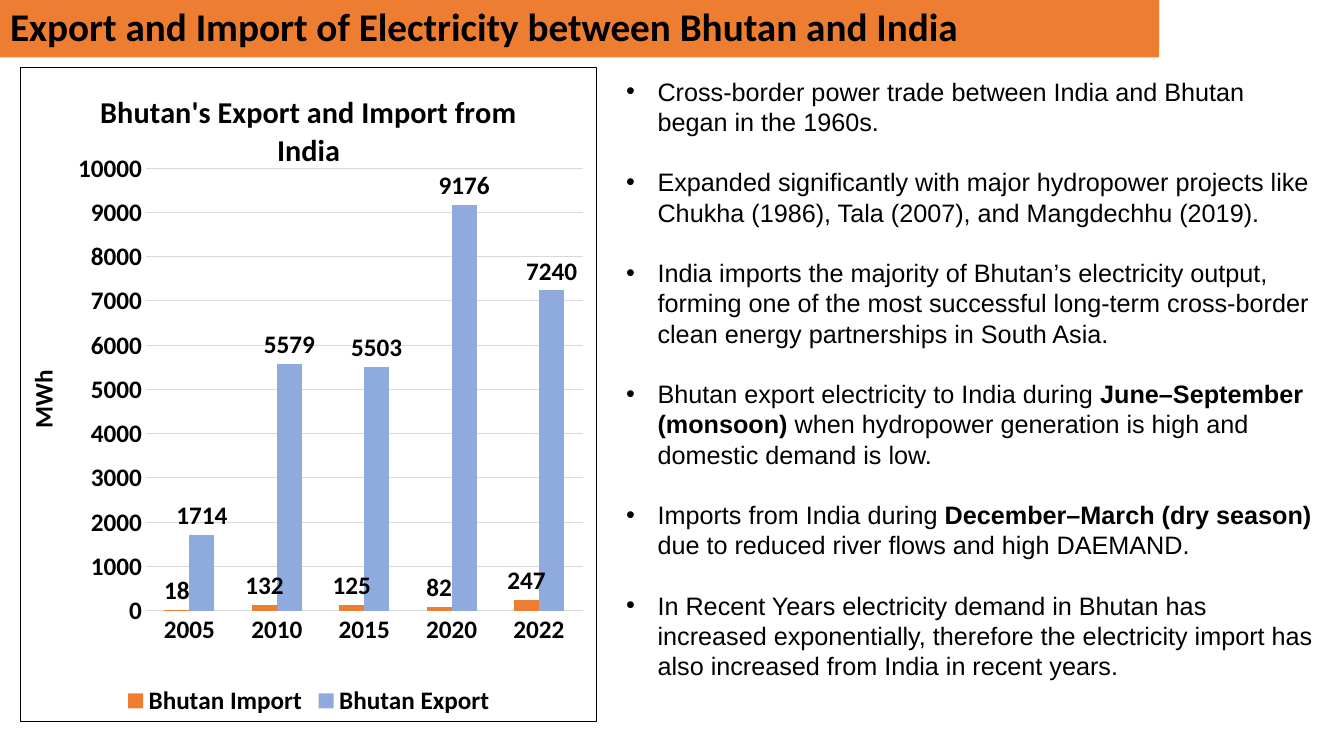
from lxml.etree import SubElement
from pptx import Presentation
from pptx.chart.data import CategoryChartData
from pptx.dml.color import RGBColor
from pptx.enum.chart import XL_CHART_TYPE, XL_LABEL_POSITION, XL_LEGEND_POSITION, XL_TICK_MARK
from pptx.enum.text import MSO_ANCHOR, MSO_AUTO_SIZE, PP_ALIGN
from pptx.oxml import parse_xml
from pptx.oxml.ns import nsdecls, qn
from pptx.util import Pt

BLACK, ORANGE, BLUE, GREY = "000000", "ED7D31", "8FAADC", "D9D9D9"
YEARS = ["2005", "2010", "2015", "2020", "2022"]
TRADE = [
    ("Bhutan Import", ORANGE, [18, 132, 125, 82, 247]),
    ("Bhutan Export", BLUE, [1714, 5579, 5503, 9176, 7240]),
]
# Each point alternates plain and bold pieces, starting with plain.
POINTS = [
    ["Cross-border power trade between India and Bhutan began in the 1960s."],
    ["Expanded significantly with major hydropower projects like Chukha (1986), "
     "Tala (2007), and Mangdechhu (2019)."],
    ["India imports the majority of Bhutan’s electricity output, forming one of the most "
     "successful long-term cross-border clean energy partnerships in South Asia."],
    ["Bhutan export electricity to India during ", "June–September (monsoon)",
     " when hydropower generation is high and domestic demand is low."],
    ["Imports from India during ", "December–March (dry season)",
     " due to reduced river flows and high DAEMAND."],
    ["In Recent Years electricity demand in Bhutan has increased exponentially, therefore "
     "the electricity import has also increased from India in recent years."],
]


def color(value):
    return RGBColor.from_string(value)


def paint(fill, value):
    fill.solid()
    fill.fore_color.rgb = color(value)


class Page:
    def __init__(self, slide):
        self.slide = slide
        self.head, self.text = "Calibri", "Arial"
        self.size, self.step, self.indent = 18, 21.6, 22.5

    def style(self, font, name, size, bold):
        font.name, font.size, font.bold = name, Pt(size), bold
        font.color.rgb = color(BLACK)

    def place(self, shape, left, top, width, height):
        shape.left, shape.top = Pt(left), Pt(top)
        shape.width, shape.height = Pt(width), Pt(height)
        frame = shape.text_frame
        frame.word_wrap = True
        frame.auto_size = MSO_AUTO_SIZE.NONE
        frame.vertical_anchor = MSO_ANCHOR.MIDDLE
        return frame

    def title(self, text, *box):
        shape = self.slide.shapes.title
        frame = self.place(shape, *box)
        paint(shape.fill, ORANGE)
        frame.text = text
        para = frame.paragraphs[0]
        para.alignment, para.line_spacing = PP_ALIGN.LEFT, 0.9
        self.style(para.font, self.head, 28, True)

    def points(self, items, *box):
        frame = self.place(self.slide.placeholders[1], *box)
        for i, parts in enumerate(items):
            para = frame.add_paragraph() if i else frame.paragraphs[0]
            props = para._p.get_or_add_pPr()
            props.set("marL", str(Pt(self.indent)))
            props.set("indent", str(-Pt(self.indent)))
            SubElement(props, qn("a:buFont"), typeface=self.text)
            SubElement(props, qn("a:buChar"), char="•")
            para.alignment = PP_ALIGN.LEFT
            para.line_spacing = Pt(self.step)
            para.space_before = Pt(self.step if i else 0)
            self.style(para.font, self.text, self.size, False)
            for j, part in enumerate(parts):
                run = para.add_run()
                run.text = part
                if j % 2:
                    run.font.bold = True

    def label(self, owner, text, size):
        """Give a chart or an axis its title."""
        frame = owner.text_frame
        frame.text = text
        self.style(frame.paragraphs[0].font, self.head, size, True)

    def columns(self, title, unit, cats, rows, *box):
        data = CategoryChartData()
        data.categories = cats
        for name, _, vals in rows:
            data.add_series(name, vals)
        chart = self.slide.shapes.add_chart(
            XL_CHART_TYPE.COLUMN_CLUSTERED, *map(Pt, box), data).chart
        self.style(chart.font, self.head, self.size, True)
        self.label(chart.chart_title, title, 21.6)
        chart.chart_title.include_in_layout = False
        chart.has_legend = True
        chart.legend.position = XL_LEGEND_POSITION.BOTTOM
        chart.legend.include_in_layout = False
        self.axes(chart, unit)
        plot = chart.plots[0]
        plot.gap_width, plot.overlap, plot.vary_by_categories = 150, 0, False
        for series, (_, fill, _) in zip(plot.series, rows):
            paint(series.format.fill, fill)
            labels = series.data_labels
            labels.show_value = True
            labels.position = XL_LABEL_POSITION.OUTSIDE_END
            self.style(labels.font, self.head, self.size, True)
        self.frame(chart, x=0.217, y=0.155, w=0.759, h=0.676)

    def axes(self, chart, unit):
        cat, val = chart.category_axis, chart.value_axis
        for axis in (cat, val):
            axis.major_tick_mark = axis.minor_tick_mark = XL_TICK_MARK.NONE
            self.style(axis.tick_labels.font, self.head, self.size, True)
        val.minimum_scale, val.maximum_scale, val.major_unit = 0, 10000, 1000
        for line in (cat.format.line, val.major_gridlines.format.line):
            paint(line.fill, GREY)
            line.width = Pt(0.75)
        val.format.line.fill.background()
        self.label(val.axis_title, unit, self.size)

    def frame(self, chart, **area):
        """Fix the plot area and draw the outer border."""
        root = chart._chartSpace.find(qn("c:chart"))
        plot = root.find(qn("c:plotArea"))
        for old in plot.findall(qn("c:layout")):
            plot.remove(old)
        spots = "".join(f'<c:{key} val="{val}"/>' for key, val in area.items())
        plot.insert(0, parse_xml(
            f'<c:layout {nsdecls("c")}><c:manualLayout><c:layoutTarget val="inner"/>'
            f'<c:xMode val="edge"/><c:yMode val="edge"/>{spots}</c:manualLayout></c:layout>'))
        root.addnext(parse_xml(
            f'<c:spPr {nsdecls("c", "a")}><a:noFill/><a:ln w="{Pt(0.75)}"><a:solidFill>'
            f'<a:srgbClr val="{BLACK}"/></a:solidFill></a:ln></c:spPr>'))


def main():
    deck = Presentation()
    deck.slide_width, deck.slide_height = Pt(960), Pt(540)
    page = Page(deck.slides.add_slide(deck.slide_layouts[1]))
    page.title("Export and Import of Electricity between Bhutan and India", 0, 0, 828, 41)
    page.columns("Bhutan's Export and Import from India", "MWh", YEARS, TRADE,
                 14.5, 47.5, 412, 468)
    page.points(POINTS, 440, 48.5, 505.5, 443.5)
    deck.save("out.pptx")


if __name__ == "__main__":
    main()
